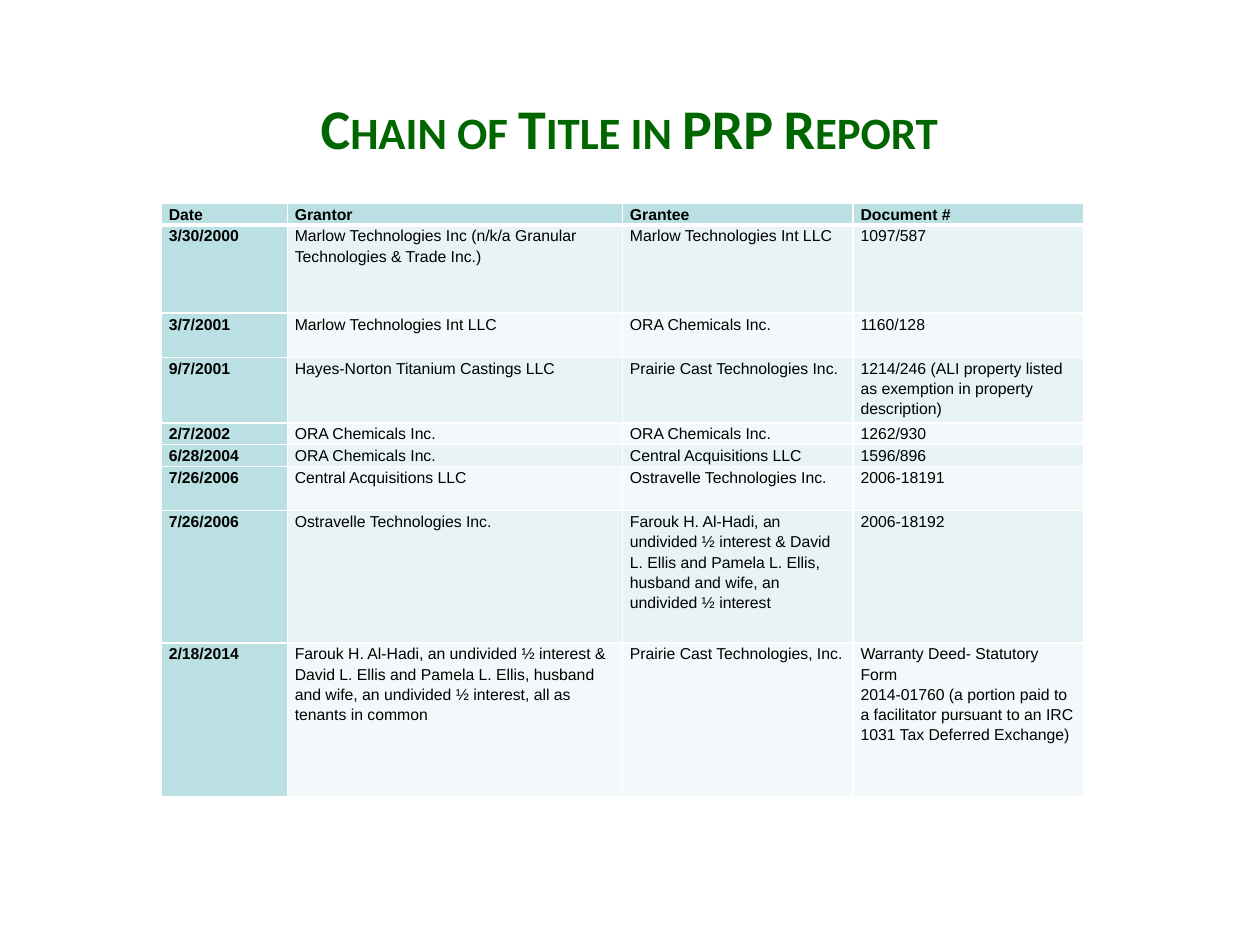
import pptx
import pptx.dml.color
import pptx.enum.text
import pptx.oxml.ns
import pptx.util
from lxml import etree

Inches = pptx.util.Inches
Pt = pptx.util.Pt
RGBColor = pptx.dml.color.RGBColor

GREEN = RGBColor(0x00, 0x66, 0x00)
BLACK = RGBColor(0x00, 0x00, 0x00)
WHITE = RGBColor(0xFF, 0xFF, 0xFF)
HEADING_TEAL = RGBColor(0xBB, 0xE0, 0xE3)
BAND_FILLS = (RGBColor(0xE7, 0xF3, 0xF4), RGBColor(0xF3, 0xF9, 0xFA))

SLIDE_WIDTH, SLIDE_HEIGHT = Inches(10), Inches(7.5)
COLUMN_WIDTHS = (1, 2.66, 1.83, 1.83)
ROW_HEIGHTS = (0.16, 0.7, 0.35, 0.52, 0.17, 0.17, 0.35, 1.05, 1.22)

OWNERS = (
    "Farouk H. Al-Hadi, an undivided ½ interest & David L. Ellis and "
    "Pamela L. Ellis, husband and wife, an undivided ½ interest"
)
DEEDS = (
    ("Date", "Grantor", "Grantee", "Document #"),
    ("3/30/2000", "Marlow Technologies Inc (n/k/a Granular Technologies & Trade Inc.)",
     "Marlow Technologies Int LLC", "1097/587"),
    ("3/7/2001", "Marlow Technologies Int LLC", "ORA Chemicals Inc.", "1160/128"),
    ("9/7/2001", "Hayes-Norton Titanium Castings LLC", "Prairie Cast Technologies Inc.",
     "1214/246 (ALI property listed as exemption in property description)"),
    ("2/7/2002", "ORA Chemicals Inc.", "ORA Chemicals Inc.", "1262/930"),
    ("6/28/2004", "ORA Chemicals Inc.", "Central Acquisitions LLC", "1596/896"),
    ("7/26/2006", "Central Acquisitions LLC", "Ostravelle Technologies Inc.", "2006-18191"),
    ("7/26/2006", "Ostravelle Technologies Inc.", OWNERS, "2006-18192"),
    ("2/18/2014", OWNERS + ", all as tenants in common", "Prairie Cast Technologies, Inc.",
     "Warranty Deed- Statutory Form\n2014-01760 (a portion paid to a facilitator "
     "pursuant to an IRC 1031 Tax Deferred Exchange)"),
)


def set_font(font, name, size, color, bold):
    font.name = name
    font.size = Pt(size)
    font.color.rgb = color
    font.bold = bold


def add_title(page, text):
    box = page.shapes.add_textbox(
        int(SLIDE_WIDTH * 0.083), int(SLIDE_HEIGHT * 0.063),
        int(SLIDE_WIDTH * 0.833), int(SLIDE_HEIGHT * 0.144))
    frame = box.text_frame
    frame.word_wrap = True
    frame.vertical_anchor = pptx.enum.text.MSO_ANCHOR.MIDDLE
    para = frame.paragraphs[0]
    para.alignment = pptx.enum.text.PP_ALIGN.CENTER
    span = para.add_run()
    span.text = text
    set_font(para.font, "Calibri", 32, GREEN, True)
    span.font._element.set("cap", "small")


def add_borders(cell, bottom_width):
    properties = cell._tc.get_or_add_tcPr()
    widths = {"a:lnL": 1, "a:lnR": 1, "a:lnT": 1, "a:lnB": bottom_width}
    for index, (tag, width) in enumerate(widths.items()):
        line = etree.Element(pptx.oxml.ns.qn(tag), w=str(Pt(width)))
        fill = etree.SubElement(line, pptx.oxml.ns.qn("a:solidFill"))
        etree.SubElement(fill, pptx.oxml.ns.qn("a:srgbClr"), val=str(WHITE))
        properties.insert(index, line)


def fill_cell(cell, text, color, bold, bottom_width):
    cell.text = text
    cell.margin_left = cell.margin_right = Inches(0.06)
    cell.margin_top = cell.margin_bottom = 0
    cell.fill.solid()
    cell.fill.fore_color.rgb = color
    add_borders(cell, bottom_width)
    for para in cell.text_frame.paragraphs:
        para.line_spacing = 1.15
        set_font(para.font, "Arial", 9, BLACK, bold)


def add_deed_table(page):
    table = page.shapes.add_table(
        len(DEEDS), len(COLUMN_WIDTHS),
        int(SLIDE_WIDTH * 0.128), int(SLIDE_HEIGHT * 0.215),
        Inches(sum(COLUMN_WIDTHS)), Inches(sum(ROW_HEIGHTS))).table
    for column, width in zip(table.columns, COLUMN_WIDTHS):
        column.width = Inches(width)
    for row, height in zip(table.rows, ROW_HEIGHTS):
        row.height = Inches(height)
    for row_index, deed in enumerate(DEEDS):
        for column_index, text in enumerate(deed):
            heading = row_index == 0 or column_index == 0
            color = HEADING_TEAL if heading else BAND_FILLS[(row_index - 1) % 2]
            fill_cell(table.cell(row_index, column_index), text, color, heading,
                      3 if row_index == 0 else 1)


def main():
    deck = pptx.Presentation()
    deck.slide_width, deck.slide_height = SLIDE_WIDTH, SLIDE_HEIGHT
    page = deck.slides.add_slide(deck.slide_layouts[6])
    add_title(page, "Chain of Title in PRP Report")
    add_deed_table(page)
    deck.save("out.pptx")


if __name__ == "__main__":
    main()
